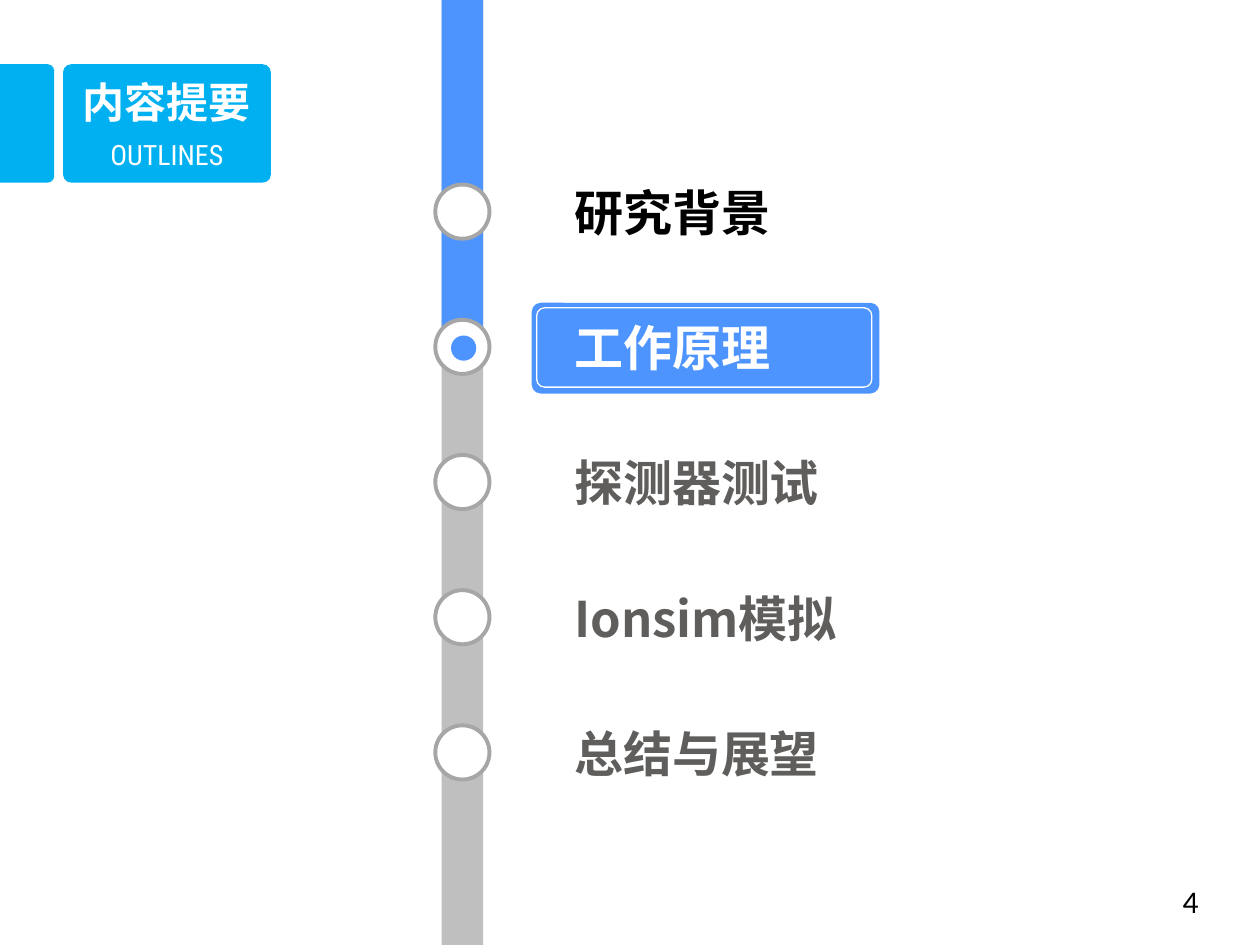
from lxml import etree
from pptx import Presentation, util as u
from pptx.dml.color import RGBColor
from pptx.enum import shapes, text
from pptx.oxml import ns

# Content
HEADING, SUBHEADING, PAGE = "内容提要", "OUTLINES", "4"
CHAPTERS = ["研究背景", "工作原理", "探测器测试", "Ionsim模拟", "总结与展望"]
CURRENT = 1

COLOURS = {"tab": "00B0F0", "active": "4D94FF", "track": "BFBFBF", "ring": "A6A6A6",
           "white": "FFFFFF", "done": "000000", "pending": "5F5E5C"}
CJK_JP, CJK_SC = "Noto Sans CJK JP", "Noto Sans CJK SC"

# Layout in inches
WIDTH, HEIGHT = 10, 7.5
TRACK_CENTRE, TRACK_WIDTH = 3.67, 0.33
FIRST_ROW, ROW_STEP = 1.68, 1.073
RING, DOT = 0.43, 0.2
TAB_TOP, TAB_HEIGHT, TAB_LEFT, TAB_WIDTH, STUB_WIDTH = 0.51, 0.94, 0.5, 1.65, 0.43

deck = Presentation()
deck.slide_width, deck.slide_height = u.Inches(WIDTH), u.Inches(HEIGHT)
slide = deck.slides.add_slide(deck.slide_layouts[6])
KIND = shapes.MSO_SHAPE


def rgb(name):
    return RGBColor.from_string(COLOURS[name])


def add_part(kind, left, top, width, height, fill=None, line=None, weight=1, corner=None):
    part = slide.shapes.add_shape(kind, *map(u.Inches, (left, top, width, height)))
    part.shadow.inherit = False
    if fill:
        part.fill.solid()
        part.fill.fore_color.rgb = rgb(fill)
    else:
        part.fill.background()
    if line:
        part.line.color.rgb = rgb(line)
        part.line.width = u.Pt(weight)
    else:
        part.line.fill.background()
    if corner is not None:
        part.adjustments[0] = corner
    return part


def add_circle(centre_x, centre_y, size, **style):
    return add_part(KIND.OVAL, centre_x - size / 2, centre_y - size / 2, size, size, **style)


def add_text(words, left, top, width, height, size=18, font="Calibri", colour="white",
             bold=False, align=text.PP_ALIGN.LEFT):
    box = slide.shapes.add_textbox(*map(u.Inches, (left, top, width, height)))
    box.text_frame.word_wrap = True
    paragraph = box.text_frame.paragraphs[0]
    paragraph.alignment = align
    run = paragraph.add_run()
    run.text = words
    run.font.size, run.font.bold, run.font.name = u.Pt(size), bold, font
    run.font.color.rgb = rgb(colour)
    if "CJK" in font:
        east_asian = etree.SubElement(run.font._element, ns.qn("a:ea"))
        east_asian.set("typeface", font)


# Heading tab, with a stub at the slide's edge turned to round its right corners
stub = add_part(KIND.ROUND_2_SAME_RECTANGLE, (STUB_WIDTH - TAB_HEIGHT) / 2,
                TAB_TOP + (TAB_HEIGHT - STUB_WIDTH) / 2, TAB_HEIGHT, STUB_WIDTH,
                fill="tab", corner=0.12)
stub.rotation = 90
add_part(KIND.ROUNDED_RECTANGLE, TAB_LEFT, TAB_TOP, TAB_WIDTH, TAB_HEIGHT,
         fill="tab", corner=0.07)
centre = text.PP_ALIGN.CENTER
add_text(SUBHEADING, TAB_LEFT, 1.04, TAB_WIDTH, 0.37, size=16, font="Roboto Condensed",
         align=centre)
add_text(HEADING, TAB_LEFT, 0.56, TAB_WIDTH, 0.5, size=24, bold=True, align=centre)

# Progress track
current_y = FIRST_ROW + CURRENT * ROW_STEP
track_left = TRACK_CENTRE - TRACK_WIDTH / 2
add_part(KIND.RECTANGLE, track_left, 0, TRACK_WIDTH, HEIGHT, fill="track")
add_part(KIND.RECTANGLE, track_left, 0, TRACK_WIDTH, current_y - 0.08, fill="active")

# Highlight behind the current chapter
add_part(KIND.ROUNDED_RECTANGLE, 4.22, current_y - 0.35, 2.76, 0.72,
         fill="active", corner=0.1)
add_part(KIND.ROUNDED_RECTANGLE, 4.26, current_y - 0.31, 2.66, 0.63,
         line="white", weight=0.75, corner=0.1)

# Chapters and their stops
for row, chapter in enumerate(CHAPTERS):
    y = FIRST_ROW + row * ROW_STEP
    add_circle(TRACK_CENTRE, y, RING, fill="white", line="ring", weight=2.25)
    colour = "white" if row == CURRENT else "done" if row < CURRENT else "pending"
    add_text(chapter, 4.46, y - 0.28, 2.6, 0.57, size=28, bold=True, colour=colour,
             font=CJK_JP if row <= CURRENT else CJK_SC)
add_circle(TRACK_CENTRE + 0.01, current_y + 0.01, DOT, fill="active")

# Page number
add_text(PAGE, 8.74, 6.95, 0.87, 0.37, colour="done", align=text.PP_ALIGN.RIGHT)

deck.save("out.pptx")
